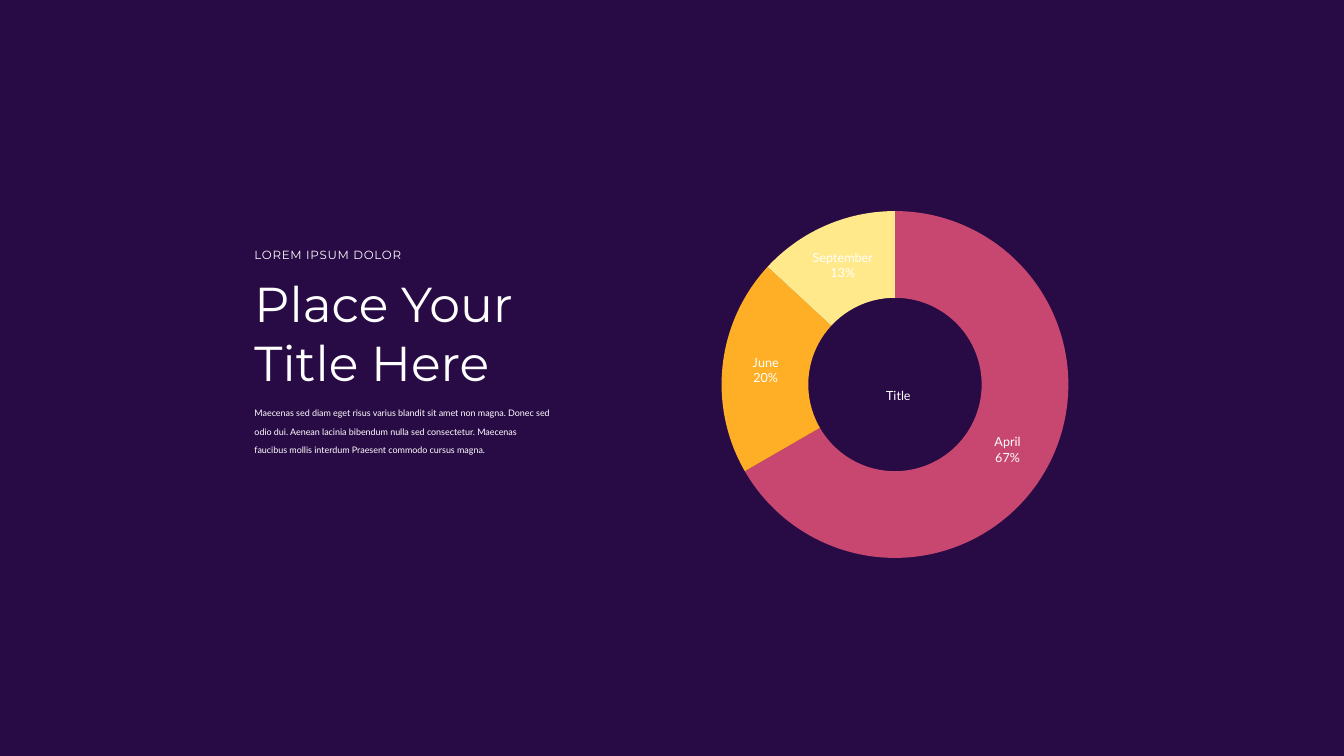
from lxml import etree
from pptx import Presentation
from pptx.chart.data import CategoryChartData
from pptx.dml.color import RGBColor
from pptx.enum.chart import XL_CHART_TYPE
from pptx.enum.text import MSO_ANCHOR, MSO_AUTO_SIZE, PP_ALIGN
from pptx.oxml import parse_xml
from pptx.oxml.ns import nsdecls, qn
from pptx.util import Inches, Pt

DOUGHNUT = XL_CHART_TYPE.DOUGHNUT
TOP, LEFT, NO_FIT = MSO_ANCHOR.TOP, PP_ALIGN.LEFT, MSO_AUTO_SIZE.NONE
WIDTH, HEIGHT = 26.67, 15
TEXT_LEFT = 4.99 / WIDTH
INSET = Inches(0.06)
COLORS = {
    "background": "280B45",
    "text": "FFFFFF",
    "April": "C74770",
    "June": "FFAF25",
    "September": "FFE98A",
}
HEADING, BODY = "Montserrat", "Lato"


class SlideBuilder:
    """Holds the style and the current slide; boxes are shares of the slide."""

    def __init__(self, deck):
        self.deck = deck
        self.slide = deck.slides.add_slide(deck.slide_layouts[1])
        self.paint(self.slide.background.fill, "background")

    def paint(self, fill, color):
        fill.solid()
        fill.fore_color.rgb = RGBColor.from_string(COLORS[color])

    def box(self, left, top, width, height):
        across, down = self.deck.slide_width, self.deck.slide_height
        return [round(v) for v in (left * across, top * down,
                                   width * across, height * down)]

    def style_font(self, font, face, size):
        font.name, font.size, font.bold = face, Pt(size), False
        font.color.rgb = RGBColor.from_string(COLORS["text"])

    def set_text(self, shape, box, text, face, size, space_before=0, **run_props):
        for side, length in zip(("left", "top", "width", "height"), self.box(*box)):
            setattr(shape, side, length)
        frame = shape.text_frame
        frame_format = {
            "margin_left": INSET, "margin_top": INSET,
            "margin_right": INSET, "margin_bottom": INSET,
            "word_wrap": True, "auto_size": NO_FIT, "vertical_anchor": TOP,
        }
        for name, value in frame_format.items():
            setattr(frame, name, value)
        paragraph = frame.paragraphs[0]
        paragraph.alignment = LEFT
        paragraph.space_before = Pt(space_before)
        run = paragraph.add_run()
        run.text = text
        self.style_font(run.font, face, size)
        for name, value in run_props.items():
            run.font._element.set(name, str(value))
        return paragraph

    def title(self, box, text, size):
        self.set_text(self.slide.shapes.title, box, text, HEADING, size)

    def body(self, box, text, size, **options):
        paragraph = self.set_text(self.slide.placeholders[1], box, text,
                                  BODY, size, **options)
        props = paragraph._p.get_or_add_pPr()
        props.set("marL", "0")
        props.set("indent", "0")
        etree.SubElement(props, qn("a:buNone"))

    def label(self, box, text, size, **options):
        text_box = self.slide.shapes.add_textbox(*self.box(*box))
        self.set_text(text_box, box, text, HEADING, size, **options)

    def place(self, element, **position):
        """Give a chart part a manual layout, in shares of the chart."""
        layout = element.find(qn("c:layout"))
        if layout is None:
            layout = etree.Element(qn("c:layout"))
            element.insert(0, layout)
        inner = '<c:layoutTarget val="inner"/>' if "w" in position else ""
        modes = "".join(f'<c:{k}Mode val="edge"/>' for k in "xy")
        values = "".join(f'<c:{k} val="{v}"/>' for k, v in position.items())
        layout.append(parse_xml(f'<c:manualLayout {nsdecls("c")}>'
                                f'{inner}{modes}{values}</c:manualLayout>'))

    def doughnut(self, box, title, shares, size, hole):
        data = CategoryChartData()
        data.categories = list(shares)
        data.add_series("Series 1", list(shares.values()))
        chart = self.slide.shapes.add_chart(DOUGHNUT, *self.box(*box), data).chart
        chart.has_legend = False
        self.style_font(chart.font, BODY, size)

        # Title in the hole
        chart.has_title = True
        chart.chart_title.text_frame.text = title
        run = chart.chart_title.text_frame.paragraphs[0].runs[0]
        self.style_font(run.font, BODY, size)
        title_element = chart.chart_title._element
        title_element.find(qn("c:overlay")).set("val", "1")
        self.place(title_element, x=0.48, y=0.49)

        # Ring
        plot = chart.plots[0]
        plot.vary_by_categories = True
        plot._element.find(qn("c:holeSize")).set("val", str(hole))
        self.place(plot._element.getparent(), x=0.18, y=0.18, w=0.64, h=0.62)
        series = plot.series[0]
        for index, month in enumerate(shares):
            segment = series.points[index].format
            self.paint(segment.fill, month)
            segment.line.fill.background()

        # Month and percentage on each segment
        labels = series.data_labels
        label_format = {
            "show_category_name": True, "show_percentage": True,
            "show_value": False, "number_format": "#,##0%",
            "number_format_is_linked": False,
        }
        for name, value in label_format.items():
            setattr(labels, name, value)
        self.style_font(labels.font, BODY, size)
        separator = etree.Element(qn("c:separator"))
        separator.text = "\n"
        labels._element.find(qn("c:showBubbleSize")).addnext(separator)


def main():
    deck = Presentation()
    deck.slide_width, deck.slide_height = Inches(WIDTH), Inches(HEIGHT)
    page = SlideBuilder(deck)

    # Chart on the right
    page.doughnut((12.21 / WIDTH, 2.19 / HEIGHT, 11.1 / WIDTH, 11.1 / HEIGHT),
                  "Title", {"April": 66, "June": 20, "September": 13},
                  size=18, hole=75)

    # Text column on the left
    page.body((TEXT_LEFT, 7.95 / HEIGHT, 5.99 / WIDTH, 2.2 / HEIGHT),
              "Maecenas sed diam eget risus varius blandit sit amet non magna. "
              "Donec sed odio dui. Aenean lacinia bibendum nulla sed consectetur. "
              "Maecenas faucibus mollis interdum Praesent commodo cursus magna.",
              22, space_before=45, baseline=14000)
    page.title((TEXT_LEFT, 5.37 / HEIGHT, 7.06 / WIDTH, 2.51 / HEIGHT),
               "Place Your Title Here", 70)
    page.label((TEXT_LEFT, 4.85 / HEIGHT, 6.56 / WIDTH, 0.4 / HEIGHT),
               "LOREM IPSUM DOLOR", 16.9, spc=100)

    deck.save("out.pptx")


if __name__ == "__main__":
    main()
